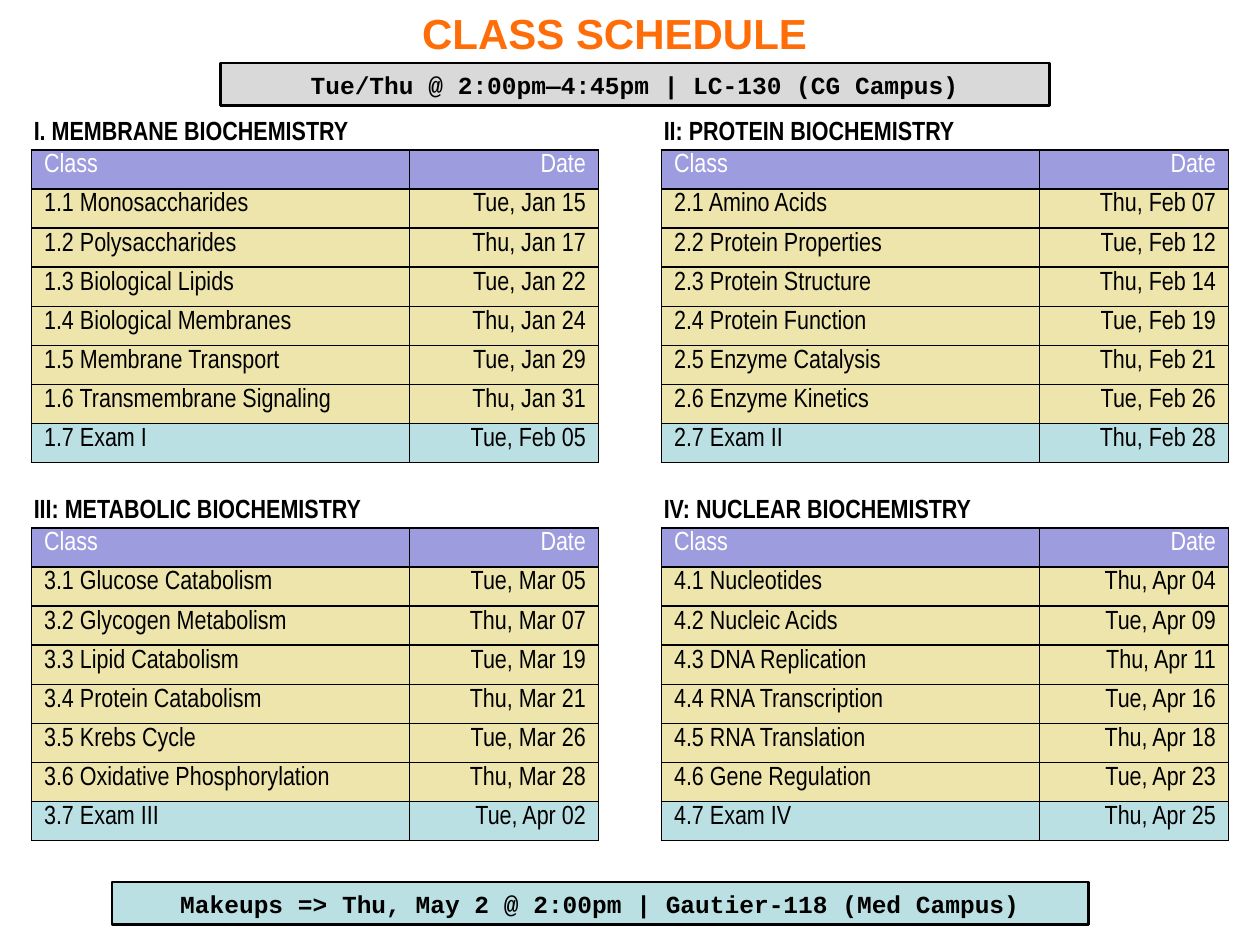
import dataclasses

import lxml.etree
import pptx
import pptx.dml.color
import pptx.enum.shapes
import pptx.enum.text
import pptx.oxml.ns
import pptx.util

Inches = pptx.util.Inches
Pt = pptx.util.Pt
Align = pptx.enum.text.PP_ALIGN
Anchor = pptx.enum.text.MSO_ANCHOR

COLORS = {
    "title": "FF6D09",
    "ink": "000000",
    "white": "FFFFFF",
    "head": "9C9CDF",
    "class": "EDE5AC",
    "exam": "BBE0E3",
    "gray": "D9D9D9",
}


@dataclasses.dataclass
class Unit:
    name: str
    width: float  # width of the heading box
    rows: list[tuple[str, str]]


@dataclasses.dataclass
class Bar:
    text: str
    left: float
    top: float
    width: float
    fill: str


UNITS = [
    Unit("I. MEMBRANE BIOCHEMISTRY", 2.73, [
        ("1.1 Monosaccharides", "Tue, Jan 15"),
        ("1.2 Polysaccharides", "Thu, Jan 17"),
        ("1.3 Biological Lipids", "Tue, Jan 22"),
        ("1.4 Biological Membranes", "Thu, Jan 24"),
        ("1.5 Membrane Transport", "Tue, Jan 29"),
        ("1.6 Transmembrane Signaling", "Thu, Jan 31"),
        ("1.7 Exam I", "Tue, Feb 05"),
    ]),
    Unit("II: PROTEIN BIOCHEMISTRY", 2.53, [
        ("2.1 Amino Acids", "Thu, Feb 07"),
        ("2.2 Protein Properties", "Tue, Feb 12"),
        ("2.3 Protein Structure", "Thu, Feb 14"),
        ("2.4 Protein Function", "Tue, Feb 19"),
        ("2.5 Enzyme Catalysis", "Thu, Feb 21"),
        ("2.6 Enzyme Kinetics", "Tue, Feb 26"),
        ("2.7 Exam II", "Thu, Feb 28"),
    ]),
    Unit("III: METABOLIC BIOCHEMISTRY", 2.83, [
        ("3.1 Glucose Catabolism", "Tue, Mar 05"),
        ("3.2 Glycogen Metabolism", "Thu, Mar 07"),
        ("3.3 Lipid Catabolism", "Tue, Mar 19"),
        ("3.4 Protein Catabolism", "Thu, Mar 21"),
        ("3.5 Krebs Cycle", "Tue, Mar 26"),
        ("3.6 Oxidative Phosphorylation", "Thu, Mar 28"),
        ("3.7 Exam III", "Tue, Apr 02"),
    ]),
    Unit("IV: NUCLEAR BIOCHEMISTRY", 2.67, [
        ("4.1 Nucleotides", "Thu, Apr 04"),
        ("4.2 Nucleic Acids", "Tue, Apr 09"),
        ("4.3 DNA Replication", "Thu, Apr 11"),
        ("4.4 RNA Transcription", "Tue, Apr 16"),
        ("4.5 RNA Translation", "Thu, Apr 18"),
        ("4.6 Gene Regulation", "Tue, Apr 23"),
        ("4.7 Exam IV", "Thu, Apr 25"),
    ]),
]

BARS = [
    Bar("Makeups => Thu, May 2 @ 2:00pm | Gautier-118 (Med Campus)", 0.89, 7, 7.75, "exam"),
    Bar("Tue/Thu @ 2:00pm—4:45pm | LC-130 (CG Campus)", 1.75, 0.5, 6.58, "gray"),
]

COLS = (3, 1.5)
ROW = 0.31


def color(name: str) -> pptx.dml.color.RGBColor:
    return pptx.dml.color.RGBColor.from_string(COLORS[name])


def write(frame, text: str, *, size=15, font="Arial Narrow", ink="ink",
          bold=False, align=Align.LEFT) -> None:
    para = frame.paragraphs[0]
    para.alignment = align
    run = para.add_run()
    run.text = text
    run.font.size = Pt(size)
    run.font.name = font
    run.font.bold = bold
    run.font.color.rgb = color(ink)


def border(cell) -> None:
    """Draw a 1 pt line on all four sides, ahead of the cell's fill."""
    props = cell._tc.get_or_add_tcPr()
    for spot, side in enumerate(("lnL", "lnR", "lnT", "lnB")):
        line = lxml.etree.Element(pptx.oxml.ns.qn(f"a:{side}"), w=str(Pt(1)))
        fill = lxml.etree.SubElement(line, pptx.oxml.ns.qn("a:solidFill"))
        lxml.etree.SubElement(fill, pptx.oxml.ns.qn("a:srgbClr"), val=COLORS["ink"])
        props.insert(spot, line)


def draw_unit(slide, unit: Unit, left: float, top: float) -> None:
    # Heading
    box = slide.shapes.add_textbox(Inches(left - 0.08), Inches(top - 0.33),
                                   Inches(unit.width), Inches(0.35))
    box.text_frame.word_wrap = False
    write(box.text_frame, unit.name, bold=True)

    # Table
    rows = [("Class", "Date"), *unit.rows]
    table = slide.shapes.add_table(len(rows), len(COLS), Inches(left), Inches(top),
                                   Inches(sum(COLS)), Inches(ROW * len(rows))).table
    table.first_row = table.horz_banding = False
    for col, width in zip(table.columns, COLS):
        col.width = Inches(width)
    for r, row in enumerate(rows):
        table.rows[r].height = Inches(ROW)
        fill = "head" if r == 0 else "exam" if r == len(rows) - 1 else "class"
        for c, text in enumerate(row):
            cell = table.cell(r, c)
            cell.margin_left = cell.margin_right = Inches(0.1)
            cell.margin_top = cell.margin_bottom = Inches(0.03)
            cell.fill.solid()
            cell.fill.fore_color.rgb = color(fill)
            border(cell)
            write(cell.text_frame, text, ink="ink" if r else "white",
                  align=Align.RIGHT if c else Align.LEFT)


def draw_bar(slide, bar: Bar) -> None:
    rect = slide.shapes.add_shape(pptx.enum.shapes.MSO_SHAPE.RECTANGLE, Inches(bar.left),
                                  Inches(bar.top), Inches(bar.width), Inches(0.34))
    rect.shadow.inherit = False
    rect.fill.solid()
    rect.fill.fore_color.rgb = color(bar.fill)
    rect.line.color.rgb = color("ink")
    rect.line.width = Pt(1.5)
    rect.text_frame.vertical_anchor = Anchor.MIDDLE
    write(rect.text_frame, bar.text, size=14, font="Courier New", bold=True,
          align=Align.CENTER)


def main() -> None:
    deck = pptx.Presentation()
    deck.slide_width, deck.slide_height = Inches(10), Inches(7.5)
    slide = deck.slides.add_slide(deck.slide_layouts[5])

    # Title
    title = slide.shapes.title
    title.left, title.top = Inches(3.25), Inches(0.01)
    title.width, title.height = Inches(3.29), Inches(0.5)
    title.text_frame.word_wrap = False
    title.text_frame.auto_size = pptx.enum.text.MSO_AUTO_SIZE.NONE
    title.text_frame.vertical_anchor = Anchor.TOP
    write(title.text_frame, "CLASS SCHEDULE", size=24, font="Arial", ink="title", bold=True)

    # Two by two grid of units
    for i, unit in enumerate(UNITS):
        draw_unit(slide, unit, 0.25 + 5 * (i % 2), 1.19 + 3 * (i // 2))

    # Time and place bars
    for bar in BARS:
        draw_bar(slide, bar)

    deck.save("out.pptx")


if __name__ == "__main__":
    main()
